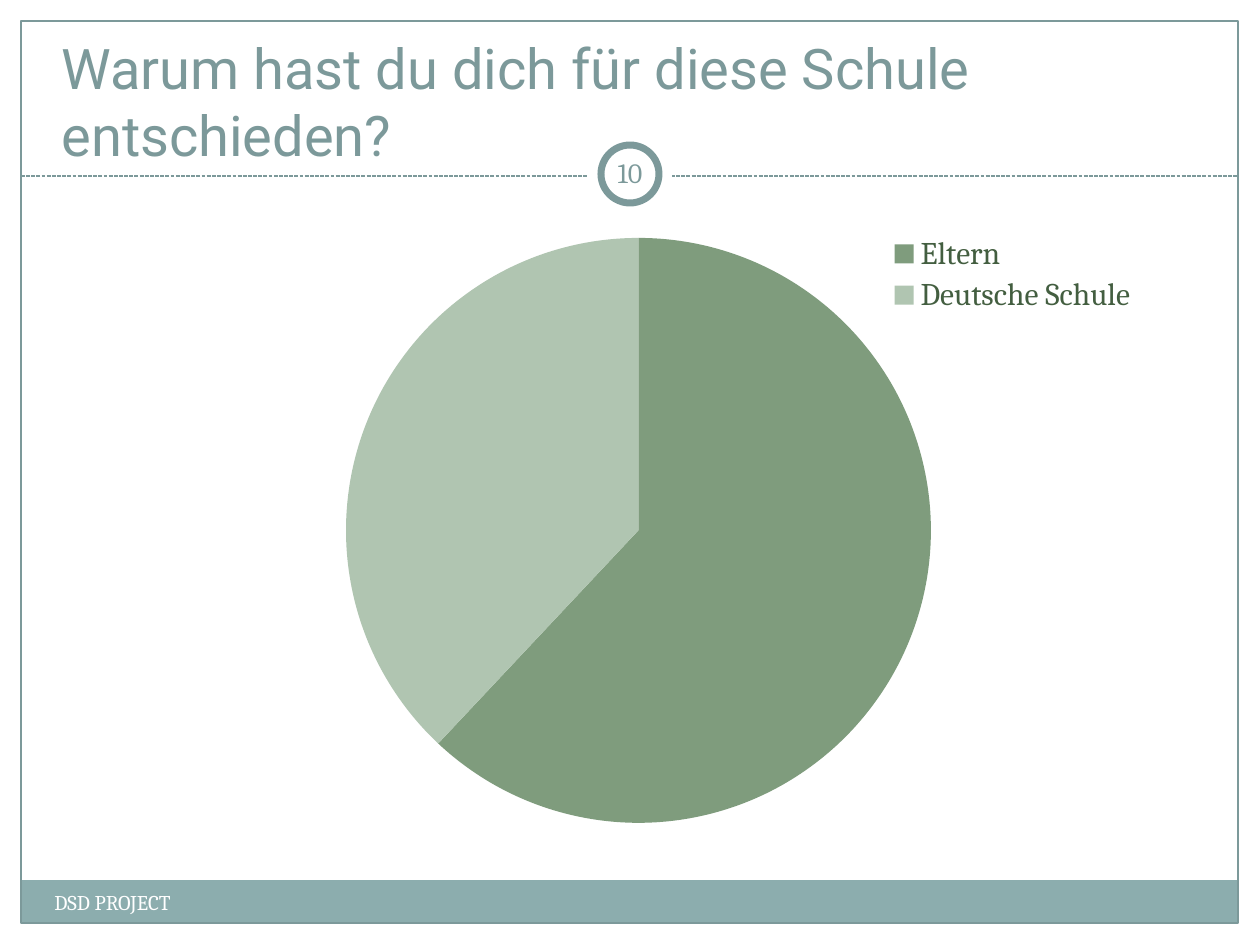
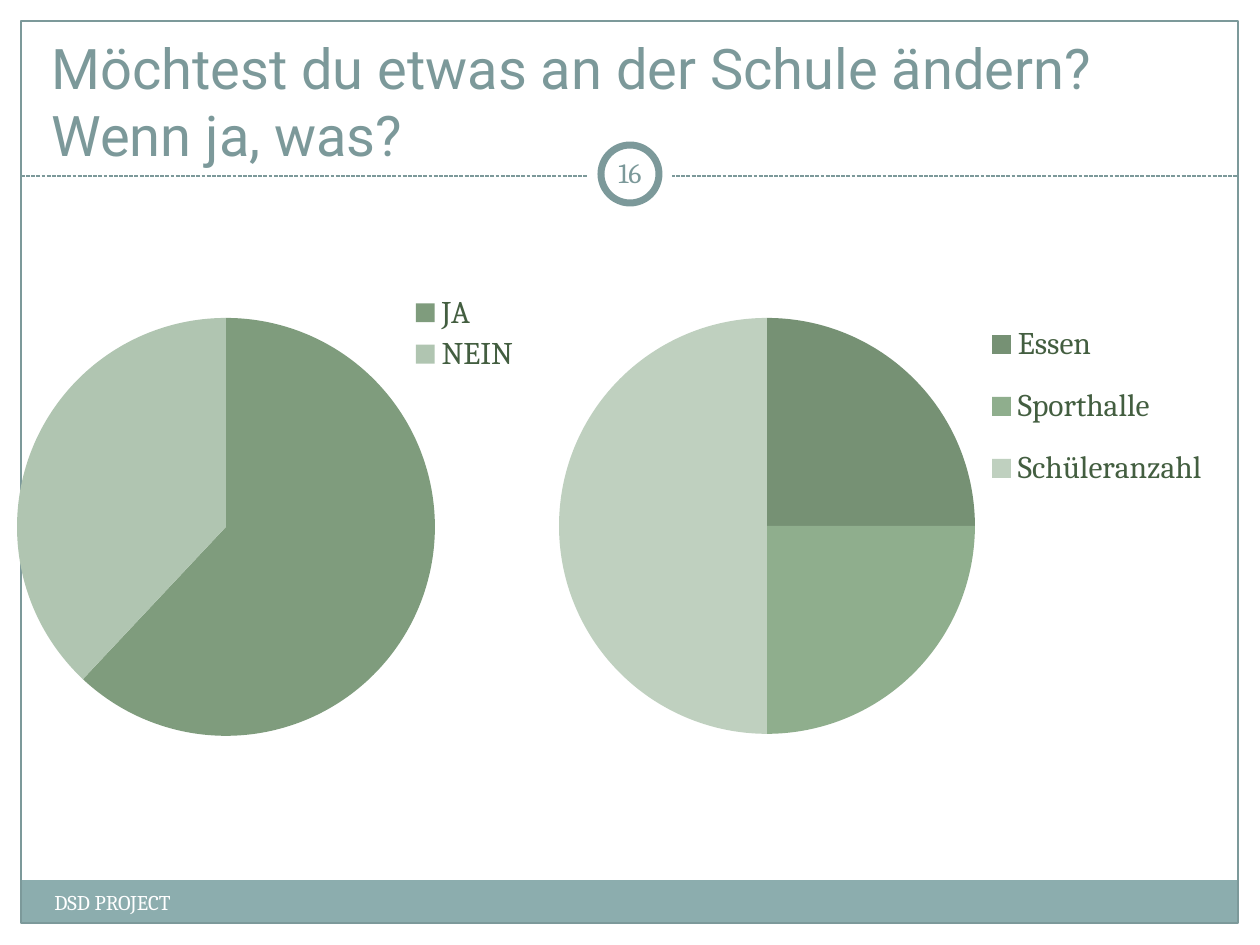
from lxml import etree
from pptx import Presentation
from pptx.chart.data import CategoryChartData
from pptx.dml.color import RGBColor
from pptx.enum.chart import XL_CHART_TYPE, XL_LEGEND_POSITION
from pptx.enum.dml import MSO_LINE
from pptx.enum.shapes import MSO_CONNECTOR, MSO_SHAPE
from pptx.enum.text import MSO_ANCHOR, PP_ALIGN
from pptx.oxml.ns import qn
from pptx.util import Pt

PX_PER_INCH = 126
SLIDE_W, SLIDE_H = 1260, 945
FRAME = (21, 21, 1217, 902)

WHITE = RGBColor(0xFF, 0xFF, 0xFF)
TEAL = RGBColor(0x7C, 0x99, 0x9A)
BAND = RGBColor(0x8C, 0xAD, 0xAE)
LEGEND_GREEN = RGBColor(0x43, 0x5E, 0x40)
TWO_GREENS = (RGBColor(0x7F, 0x9C, 0x7D), RGBColor(0xB0, 0xC5, 0xB1))
THREE_GREENS = (RGBColor(0x76, 0x91, 0x74), RGBColor(0x8F, 0xAE, 0x8D),
                RGBColor(0xBF, 0xD0, 0xBF))

TITLE_FONT = {"name": "Roboto", "size": Pt(32)}
FOOTER_FONT = {"name": "Cambria", "size": Pt(12)}
NUMBER_FONT = {"name": "Cambria", "size": Pt(16)}
LEGEND_FONT = {"name": "Cambria", "size": Pt(18)}


def px(n):
    return round(n * 914400 / PX_PER_INCH)


def emu(box):
    return [px(n) for n in box]


def set_font(font, values, color):
    for name, value in values.items():
        setattr(font, name, value)
    font.color.rgb = color


def add_figure(slide, kind, box, fill=None, line=None, width=0.75):
    sp = slide.shapes.add_shape(kind, *emu(box))
    sp.shadow.inherit = False
    if fill is None:
        sp.fill.background()
    else:
        sp.fill.solid()
        sp.fill.fore_color.rgb = fill
    if line is None:
        sp.line.fill.background()
    else:
        sp.line.color.rgb = line
        sp.line.width = Pt(width)


def add_text(slide, box, text, font, color, anchor=MSO_ANCHOR.TOP,
             align=PP_ALIGN.LEFT, inset=None):
    tf = slide.shapes.add_textbox(*emu(box)).text_frame
    tf.word_wrap = True
    tf.vertical_anchor = anchor
    if inset is not None:
        for side in ("left", "top", "right", "bottom"):
            setattr(tf, f"margin_{side}", px(inset))
    p = tf.paragraphs[0]
    p.alignment = align
    r = p.add_run()
    r.text = text
    set_font(r.font, font, color)


def add_frame(slide, box):
    """Footer band, outline and dashed rule under the title."""
    x, y, w, h = box
    band_h = 43
    add_figure(slide, MSO_SHAPE.RECTANGLE, (x, y + h - band_h, w, band_h), BAND)
    add_figure(slide, MSO_SHAPE.RECTANGLE, box, line=TEAL)
    rule_y = y + 155
    rule = slide.shapes.add_connector(
        MSO_CONNECTOR.STRAIGHT, *emu((x, rule_y, x + w, rule_y)))
    rule.line.color.rgb = TEAL
    rule.line.width = Pt(0.75)
    rule.line.dash_style = MSO_LINE.SQUARE_DOT
    sp_pr = rule._element.spPr
    etree.SubElement(sp_pr, qn("a:effectLst"))
    add_text(slide, (x + 21, y + h - 40, 494, 50), "DSD PROJECT",
             FOOTER_FONT, WHITE)


def add_number_badge(slide, box, number):
    x, y, w, h = box
    ring = 13
    add_figure(slide, MSO_SHAPE.OVAL, box, WHITE)
    add_figure(slide, MSO_SHAPE.OVAL,
               (x + ring, y + ring, w - 2 * ring, h - 2 * ring), WHITE, TEAL, 4)
    add_text(slide, (x + 10, y + 10, w - 20, 60), str(number), NUMBER_FONT,
             TEAL, MSO_ANCHOR.MIDDLE, PP_ALIGN.CENTER, 6)


def place_in_chart(parent, box, chart_box, inner=False):
    """Give a plot area or legend a fixed box, as shares of the chart."""
    x, y, w, h = box
    cx, cy, cw, ch = chart_box
    for old in parent.findall(qn("c:layout")):
        parent.remove(old)
    layout = etree.Element(qn("c:layout"))
    manual = etree.SubElement(layout, qn("c:manualLayout"))
    values = {"layoutTarget": "inner"} if inner else {}
    values.update(xMode="edge", yMode="edge",
                  x=(x - cx) / cw, y=(y - cy) / ch, w=w / cw, h=h / ch)
    for name, value in values.items():
        etree.SubElement(manual, qn(f"c:{name}")).set("val", str(value))
    if inner:
        parent.insert(0, layout)
    else:
        parent.find(qn("c:legendPos")).addnext(layout)


def add_pie(slide, box, pie_box, legend_box, shares, colors):
    data = CategoryChartData()
    data.categories = list(shares)
    data.add_series("Series 1", list(shares.values()))
    chart = slide.shapes.add_chart(XL_CHART_TYPE.PIE, *emu(box), data).chart
    chart.has_title = False
    set_font(chart.font, LEGEND_FONT, LEGEND_GREEN)
    chart.has_legend = True
    legend = chart.legend
    legend.position = XL_LEGEND_POSITION.RIGHT
    legend.include_in_layout = False
    set_font(legend.font, LEGEND_FONT, LEGEND_GREEN)
    plot = chart.plots[0]
    plot.vary_by_categories = True
    for i, color in enumerate(colors):
        fill = plot.series[0].points[i].format.fill
        fill.solid()
        fill.fore_color.rgb = color
    place_in_chart(plot._element.getparent(), pie_box, box, inner=True)
    place_in_chart(legend._element, legend_box, box)


def add_question_slide(prs, number, title, title_x):
    slide = prs.slides.add_slide(prs.slide_layouts[6])
    add_frame(slide, FRAME)
    add_number_badge(slide, (588, 132, 84, 84), number)
    add_text(slide, (title_x, 69, 1176, 105), title, TITLE_FONT, TEAL,
             MSO_ANCHOR.BOTTOM)
    return slide


def main():
    prs = Presentation()
    prs.slide_width, prs.slide_height = px(SLIDE_W), px(SLIDE_H)

    reasons = add_question_slide(
        prs, 10, "Warum hast du dich für diese Schule entschieden?", 49)
    add_pie(reasons, (126, 217, 1134, 624), (346, 238, 585, 585),
            (885, 231, 255, 87), {"Eltern": 62, "Deutsche Schule": 38},
            TWO_GREENS)

    changes = add_question_slide(
        prs, 16, "Möchtest du etwas an der Schule ändern? Wenn ja, was?", 39)
    add_pie(changes, (0, 266, 581, 522), (17, 318, 418, 418),
            (407, 290, 115, 87), {"JA": 62, "NEIN": 38}, TWO_GREENS)
    add_pie(changes, (542, 236, 692, 580), (559, 318, 416, 416),
            (982, 301, 230, 211),
            {"Essen": 25, "Sporthalle": 25, "Schüleranzahl": 50}, THREE_GREENS)

    prs.save("out.pptx")


if __name__ == "__main__":
    main()
